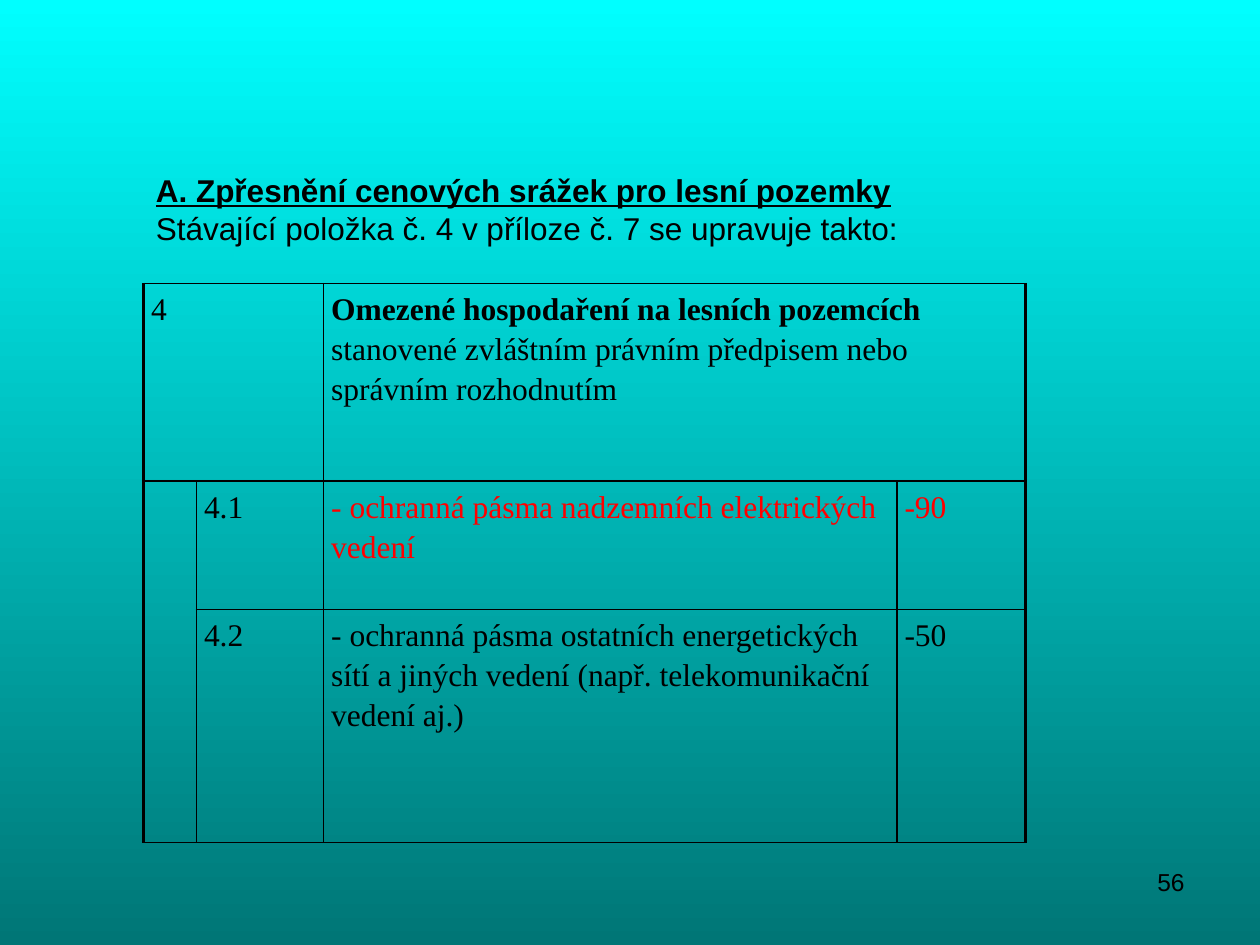
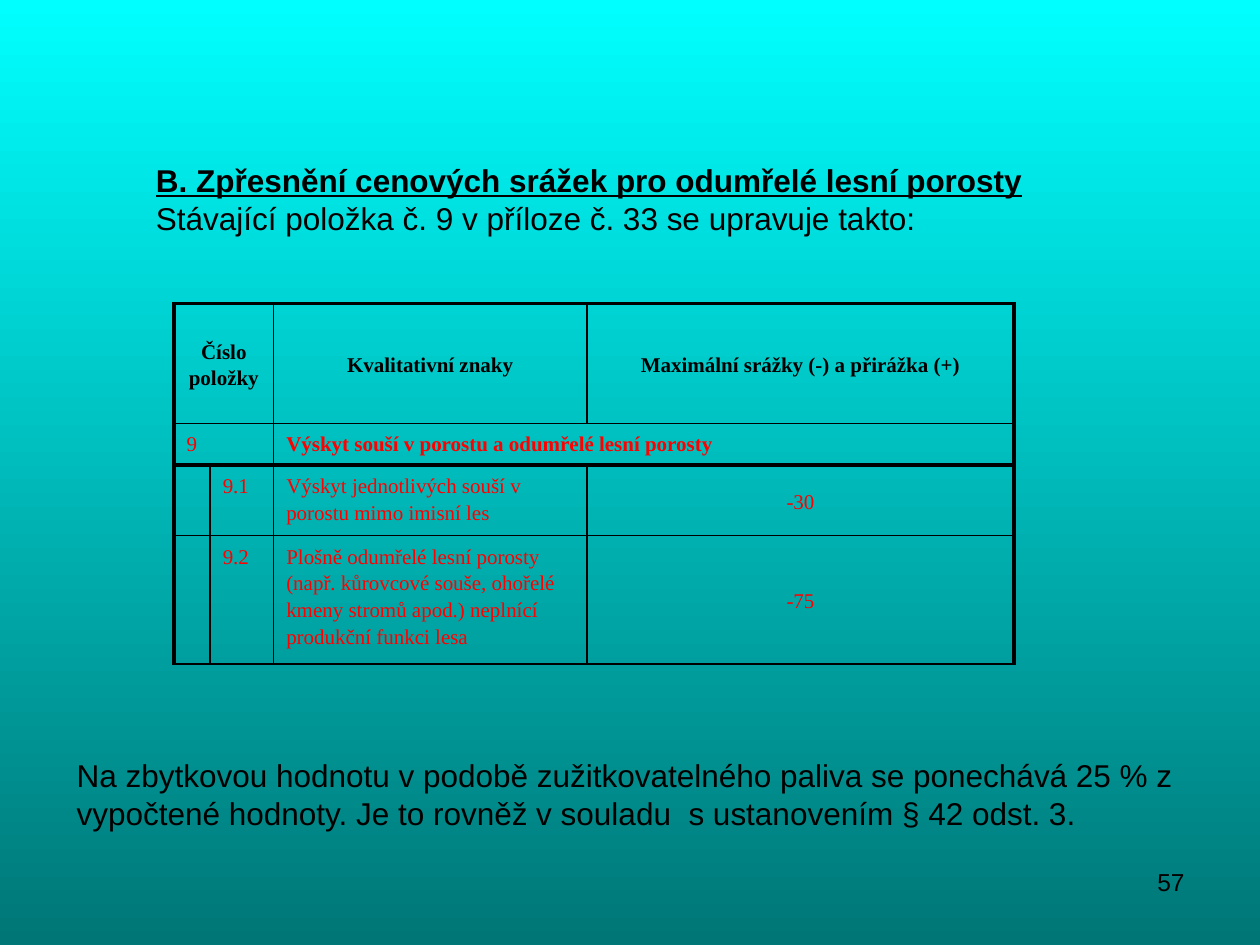
from dataclasses import dataclass
from lxml import etree
from pptx import Presentation
from pptx import util as u
from pptx.dml.color import RGBColor
from pptx.enum import text
from pptx.oxml import ns


@dataclass(frozen=True)
class Theme:
    sky: str = "00FFFF"
    deep: str = "007676"
    ink: str = "000000"
    change: str = "FF0000"
    sans: str = "Arial"
    serif: str = "Times New Roman"
    body: float = 18
    small: float = 12
    number: float = 14
    thin: float = 1
    thick: float = 2.25


theme = Theme()
Pt = u.Pt


def add_span(para, words, font, size, color=theme.ink, bold=False, underline=False):
    span = para.add_run()
    span.text = words
    span.font.name = font
    span.font.size = Pt(size)
    span.font.color.rgb = RGBColor.from_string(color)
    span.font.bold = bold
    span.font.underline = underline


def add_box(page, left, top, width, height):
    box = page.shapes.add_textbox(Pt(left), Pt(top), Pt(width), Pt(height))
    box.text_frame.word_wrap = True
    return box.text_frame


black, red = theme.ink, theme.change
pages = [
    {
        "number": "56",
        "heading": "A. Zpřesnění cenových srážek pro lesní pozemky",
        "intro": "Stávající položka č. 4 v příloze č. 7 se upravuje takto:",
        "heading_place": (82, 94.3, 590, 73),
        "table_place": (82.1, 162),
        "columns": [30.2, 72.7, 327.6, 73.4],
        "rows": [113, 73.4, 133.2],
        "size": theme.body,
        "margins": (4.32, 2.16),
        "thick_lines": [],
        "merges": [(0, 0, 0, 1), (0, 2, 0, 3), (1, 0, 2, 0)],
        "centred": [],
        "cells": {
            (0, 0): [("4", black, False)],
            (0, 2): [
                ("Omezené hospodaření na lesních pozemcích ", black, True),
                ("stanovené zvláštním právním předpisem nebo správním rozhodnutím", black, False),
            ],
            (1, 1): [("4.1", black, False)],
            (1, 2): [("- ochranná pásma nadzemních elektrických vedení", red, False)],
            (1, 3): [("-90", red, False)],
            (2, 1): [("4.2", black, False)],
            (2, 2): [("- ochranná pásma ostatních energetických sítí a jiných vedení "
                      "(např. telekomunikační vedení aj.)", black, False)],
            (2, 3): [("-50", black, False)],
        },
    },
    {
        "number": "57",
        "heading": "B. Zpřesnění cenových srážek pro odumřelé lesní porosty",
        "intro": "Stávající položka č. 9 v příloze č. 33 se upravuje takto:",
        "heading_place": (82, 88.6, 550, 73),
        "closing": "Na zbytkovou hodnotu v podobě zužitkovatelného paliva se ponechává 25 % "
                   "z vypočtené hodnoty. Je to rovněž v souladu  s ustanovením § 42 odst. 3.",
        "table_place": (99.4, 173.6),
        "columns": [20.7, 36.3, 179, 244.1],
        "rows": [68.4, 22.4, 37.7, 68.5],
        "size": theme.small,
        "margins": (7.2, 3.6),
        "thick_lines": [0, 2],
        "merges": [(0, 0, 0, 1), (1, 0, 1, 1), (1, 2, 1, 3)],
        "centred": [(0, 0), (0, 2), (0, 3), (2, 3), (3, 3)],
        "cells": {
            (0, 0): [("Číslo položky", black, True)],
            (0, 2): [("Kvalitativní znaky", black, True)],
            (0, 3): [("Maximální srážky (-) a přirážka (+)", black, True)],
            (1, 0): [("9", red, False)],
            (1, 2): [("Výskyt souší v porostu a odumřelé lesní porosty", red, True)],
            (2, 1): [("9.1", red, False)],
            (2, 2): [("Výskyt jednotlivých souší v porostu mimo imisní les", red, False)],
            (2, 3): [("-30", red, False)],
            (3, 1): [("9.2", red, False)],
            (3, 2): [("Plošně odumřelé lesní porosty (např. kůrovcové souše, ohořelé "
                      "kmeny stromů apod.) neplnící produkční funkci lesa", red, False)],
            (3, 3): [("-75", red, False)],
        },
    },
]

deck = Presentation()
deck.slide_width, deck.slide_height = Pt(720), Pt(540)

for content in pages:
    page = deck.slides.add_slide(deck.slide_layouts[6])
    backdrop = page.background.fill
    backdrop.gradient()
    backdrop.gradient_angle = 270
    for stop, color in zip(backdrop.gradient_stops, (theme.sky, theme.deep)):
        stop.color.rgb = RGBColor.from_string(color)

    para = add_box(page, 516, 491.8, 168, 37.4).paragraphs[0]
    para.alignment = text.PP_ALIGN.RIGHT
    add_span(para, content["number"], theme.sans, theme.number)

    columns, rows = content["columns"], content["rows"]
    left, top = content["table_place"]
    table = page.shapes.add_table(len(rows), len(columns), Pt(left), Pt(top),
                                  Pt(sum(columns)), Pt(sum(rows))).table
    table.first_row = table.horz_banding = False
    for column, width in zip(table.columns, columns):
        column.width = Pt(width)
    for row, height in zip(table.rows, rows):
        row.height = Pt(height)
    for first_row, first_column, last_row, last_column in content["merges"]:
        table.cell(first_row, first_column).merge(table.cell(last_row, last_column))

    side, edge = content["margins"]
    for r in range(len(rows)):
        for c in range(len(columns)):
            cell = table.cell(r, c)
            if cell.is_spanned:
                continue
            cell.margin_left = cell.margin_right = Pt(side)
            cell.margin_top = cell.margin_bottom = Pt(edge)
            end_row, end_column = r + cell.span_height, c + cell.span_width
            borders = {
                "a:lnL": c == 0,
                "a:lnR": end_column == len(columns),
                "a:lnT": r in content["thick_lines"],
                "a:lnB": end_row in content["thick_lines"],
            }
            properties = cell._tc.get_or_add_tcPr()
            for tag, is_thick in borders.items():
                weight = theme.thick if is_thick else theme.thin
                line = etree.SubElement(properties, ns.qn(tag), w=str(Pt(weight)))
                fill = etree.SubElement(line, ns.qn("a:solidFill"))
                etree.SubElement(fill, ns.qn("a:srgbClr"), val=theme.ink)
            cell.fill.background()
            para = cell.text_frame.paragraphs[0]
            para.line_spacing = 1.15
            if (r, c) in content["centred"]:
                para.alignment = text.PP_ALIGN.CENTER
                cell.vertical_anchor = text.MSO_ANCHOR.MIDDLE
            for words, color, bold in content["cells"].get((r, c), []):
                add_span(para, words, theme.serif, content["size"], color, bold)

    if "closing" in content:
        para = add_box(page, 36.7, 428.4, 652.3, 77.8).paragraphs[0]
        add_span(para, content["closing"], theme.sans, theme.body)

    frame = add_box(page, *content["heading_place"])
    add_span(frame.paragraphs[0], content["heading"], theme.sans, theme.body,
             bold=True, underline=True)
    add_span(frame.add_paragraph(), content["intro"], theme.sans, theme.body)

deck.save("out.pptx")
